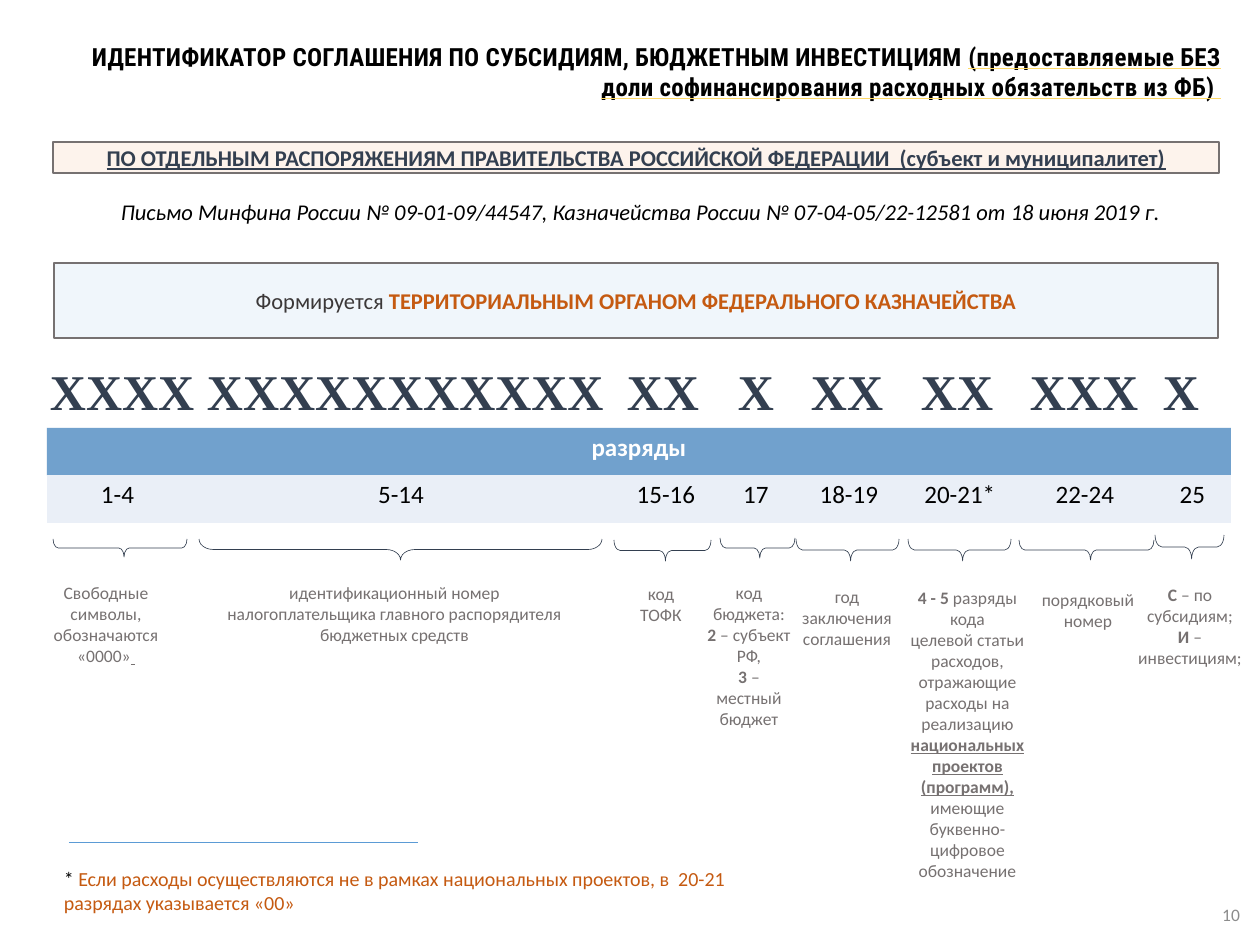
"""Build the slide that explains the digits of a subsidy agreement identifier."""
from lxml.etree import SubElement
from pptx import Presentation
from pptx.dml.color import RGBColor as RGB
from pptx.enum.shapes import MSO_CONNECTOR as LINK, MSO_SHAPE as FORM
from pptx.enum.text import MSO_ANCHOR as ANCHOR, MSO_AUTO_SIZE as FIT, PP_ALIGN as ALIGN
from pptx.oxml.ns import qn
from pptx.util import Emu, Pt

HEX = {
    "black": "000000", "white": "FFFFFF", "gray": "767171", "dark": "3B3838",
    "navy": "333F50", "rust": "C55A11", "page": "8C8C8C", "gold": "FFD966",
    "peach": "FBE5D6", "sky": "DEEBF7", "head": "2E75B6", "row": "EAEFF7",
    "rule": "5B9BD5",
}
BOLD = {"bold": True}
LINED = {"bold": True, "underline": True}
RUST = {"color": "rust"}

TITLE = [
    ("ИДЕНТИФИКАТОР СОГЛАШЕНИЯ ПО СУБСИДИЯМ, БЮДЖЕТНЫМ ИНВЕСТИЦИЯМ ", {}),
    ("(предоставляемые БЕЗ доли софинансирования расходных обязательств из ФБ) ", LINED),
]
BANDS = [
    ((53, 142, 1166, 31), "peach", "navy",
     [("ПО ОТДЕЛЬНЫМ РАСПОРЯЖЕНИЯМ ПРАВИТЕЛЬСТВА РОССИЙСКОЙ ФЕДЕРАЦИИ  "
       "(субъект и муниципалитет)", LINED)]),
    ((54, 263, 1164, 75), "sky", "dark",
     [("Формируется ", {}),
      ("ТЕРРИТОРИАЛЬНЫМ ОРГАНОМ ФЕДЕРАЛЬНОГО КАЗНАЧЕЙСТВА", BOLD | RUST)]),
]
LETTER = [("Письмо Минфина России № 09-01-09/44547, Казначейства России "
           "№ 07-04-05/22-12581 от 18 июня 2019 г.", {"italic": True})]
FOOT = [("* ", {}),
        ("Если расходы осуществляются не в рамках национальных проектов, "
         "в  20-21 разрядах указывается «00»", RUST)]

MASKS = [("ХХХХ", 50), ("ХХХХХХХХХХХ", 207), ("ХХ", 627), ("Х", 738),
         ("ХХ", 811), ("ХХ", 921), ("ХХХ", 1030), ("Х", 1163)]
DIGITS = [("1-4", 141), ("5-14", 426), ("15-16", 104), ("17", 76),
          ("18-19", 110), ("20-21*", 112), ("22-24", 138), ("25", 77)]
BRACES = [(53, 539, 134, 18), (199, 539, 403, 21), (614, 540, 97, 21),
          (720, 538, 75, 20), (796, 539, 103, 22), (908, 539, 103, 22),
          (1019, 540, 135, 20), (1155, 535, 69, 24)]
BEND = (0.29, 0.47)
WIDE_BEND = (0.68, 0.5)
NOTES = [
    ((48, 577, 116, 117), 4,
     [[("Свободные символы, обозначаются «0000»", {}), (" ", LINED)]]),
    ((211, 577, 367, 75), 4,
     [[("идентификационный номер налогоплательщика главного распорядителя "
        "бюджетных средств", {})]]),
    ((615, 578, 92, 53), 11, [[("код ТОФК", {})]]),
    ((703, 577, 92, 159), 4,
     [[("код бюджета:", {})],
      [("2", BOLD), (" – субъект РФ,", {})],
      [("3", BOLD), (" – местный бюджет", {})]]),
    ((795, 581, 104, 75), 4, [[("год заключения соглашения", {})]]),
    ((899, 582, 137, 308), 11,
     [[("4 - 5 ", BOLD), ("разряды кода", {})],
      [("целевой статьи расходов, отражающие расходы на реализацию ", {}),
       ("национальных проектов (программ), ", LINED),
       ("имеющие буквенно-цифровое обозначение", {})]]),
    ((1036, 584, 104, 75), 4, [[("порядковый", {})], [("номер", {})]]),
    ((1129, 579, 122, 95), 4,
     [[("С", BOLD), (" – по субсидиям;", {})],
      [("И", BOLD), (" – инвестициям;", {})]]),
]


def px(n):
    return Emu(int(n * 10160))


def area(box):
    return [px(n) for n in box]


def write(frame, paras, size, color, align=ALIGN.LEFT, font="Calibri"):
    for i, runs in enumerate(paras):
        para = frame.paragraphs[0] if i == 0 else frame.add_paragraph()
        para.alignment = align
        for text, style in runs:
            run = para.add_run()
            run.text = text
            look = {"size": Pt(size), "name": font, "bold": False} | style
            run.font.color.rgb = RGB.from_string(HEX[look.pop("color", color)])
            for key, value in look.items():
                setattr(run.font, key, value)


def pad(frame, side, edge, anchor=ANCHOR.TOP):
    look = {"word_wrap": True, "auto_size": FIT.NONE, "vertical_anchor": anchor,
            "margin_left": px(side), "margin_right": px(side),
            "margin_top": px(edge), "margin_bottom": px(edge)}
    for key, value in look.items():
        setattr(frame, key, value)


def label(slide, box, paras, size, color, align=ALIGN.LEFT, side=9, edge=5,
          anchor=ANCHOR.TOP, font="Calibri"):
    frame = slide.shapes.add_textbox(*area(box)).text_frame
    pad(frame, side, edge, anchor)
    write(frame, paras, size, color, align, font)
    return frame


def paint(part, node, color, alpha=None):
    part.fill.solid()
    part.fill.fore_color.rgb = RGB.from_string(HEX[color])
    if alpha:
        tint = next(node.iter(qn("a:srgbClr")))
        SubElement(tint, qn("a:alpha"), val=str(alpha * 1000))


def stroke(line, color, width):
    line.color.rgb = RGB.from_string(HEX[color])
    line.width = Pt(width)


def head(slide):
    title = slide.shapes.title
    title.left, title.top, title.width, title.height = area((30, 36, 1200, 69))
    pad(title.text_frame, 9, 5)
    write(title.text_frame, [[(t, s | BOLD) for t, s in TITLE]], 20, "black",
          ALIGN.RIGHT, "Roboto Condensed")
    for run in title.text_frame.paragraphs[0].runs:
        props = run.font._element
        props.set("spc", "20")
        if run.font.underline:
            under = SubElement(props, qn("a:uFill"))
            fill = SubElement(under, qn("a:solidFill"))
            SubElement(fill, qn("a:srgbClr"), val=HEX["gold"])
            props.find(qn("a:solidFill")).addnext(under)


def band(slide, box, fill, color, runs):
    shape = slide.shapes.add_shape(FORM.RECTANGLE, *area(box))
    shape.shadow.inherit = False
    paint(shape, shape._element, fill, 44)
    stroke(shape.line, "gray", 1)
    pad(shape.text_frame, 11, 5, ANCHOR.MIDDLE)
    write(shape.text_frame, [runs], 18, color, ALIGN.CENTER)


def masks(slide):
    text = "\t".join(mask for mask, _ in MASKS)
    frame = label(slide, (39, 356, 1180, 71), [[(text, BOLD)]], 40, "navy",
                  side=11, font="Times New Roman")
    props = frame.paragraphs[0]._p.get_or_add_pPr()
    stops = SubElement(props, qn("a:tabLst"))
    for _, x in MASKS[1:]:
        SubElement(stops, qn("a:tab"), pos=str(px(x - MASKS[0][1])), algn="l")


def grid(slide):
    wide = sum(w for _, w in DIGITS)
    frame = slide.shapes.add_table(2, len(DIGITS), *area((47, 428, wide, 95)))
    table = frame.table
    table._tbl.tblPr.find(qn("a:tableStyleId")).text = "{2D5ABB26-0587-4C30-8999-92F81FD0307C}"
    top = table.cell(0, 0)
    top.merge(table.cell(0, len(DIGITS) - 1))
    paint(top, top._tc, "head", 68)
    write(top.text_frame, [[("разряды", BOLD)]], 20, "white", ALIGN.CENTER)
    for i, (text, width) in enumerate(DIGITS):
        table.columns[i].width = px(width)
        cell = table.cell(1, i)
        paint(cell, cell._tc, "row")
        write(cell.text_frame, [[(text, {})]], 20, "black", ALIGN.CENTER)


def brace(slide, box, bend):
    x, y, w, h = box
    turned = (x + (w - h) / 2, y + (h - w) / 2, h, w)
    shape = slide.shapes.add_shape(FORM.RIGHT_BRACE, *area(turned))
    shape.rotation = 90
    shape.shadow.inherit = False
    shape.fill.background()
    stroke(shape.line, "navy", 0.5)
    for i, value in enumerate(bend):
        shape.adjustments[i] = value


def main():
    deck = Presentation()
    deck.slide_width, deck.slide_height = px(1260), px(945)
    slide = deck.slides.add_slide(deck.slide_layouts[5])
    head(slide)
    for item in BANDS:
        band(slide, *item)
    label(slide, (112, 193, 1061, 36), [LETTER], 18, "black")
    masks(slide)
    grid(slide)
    for i, box in enumerate(BRACES):
        brace(slide, box, WIDE_BEND if i == 1 else BEND)
    for box, side, paras in NOTES:
        label(slide, box, paras, 14, "gray", ALIGN.CENTER, side)
    rule = slide.shapes.add_connector(LINK.STRAIGHT, px(69), px(842), px(418), px(842))
    stroke(rule.line, "rule", 0.5)
    SubElement(rule._element.spPr, qn("a:effectLst"))
    label(slide, (55, 862, 700, 58), [FOOT], 16, "black")
    label(slide, (967, 889, 284, 51), [[("10", {})]], 14, "page", ALIGN.RIGHT,
          side=11, anchor=ANCHOR.MIDDLE)
    deck.save("out.pptx")


if __name__ == "__main__":
    main()
